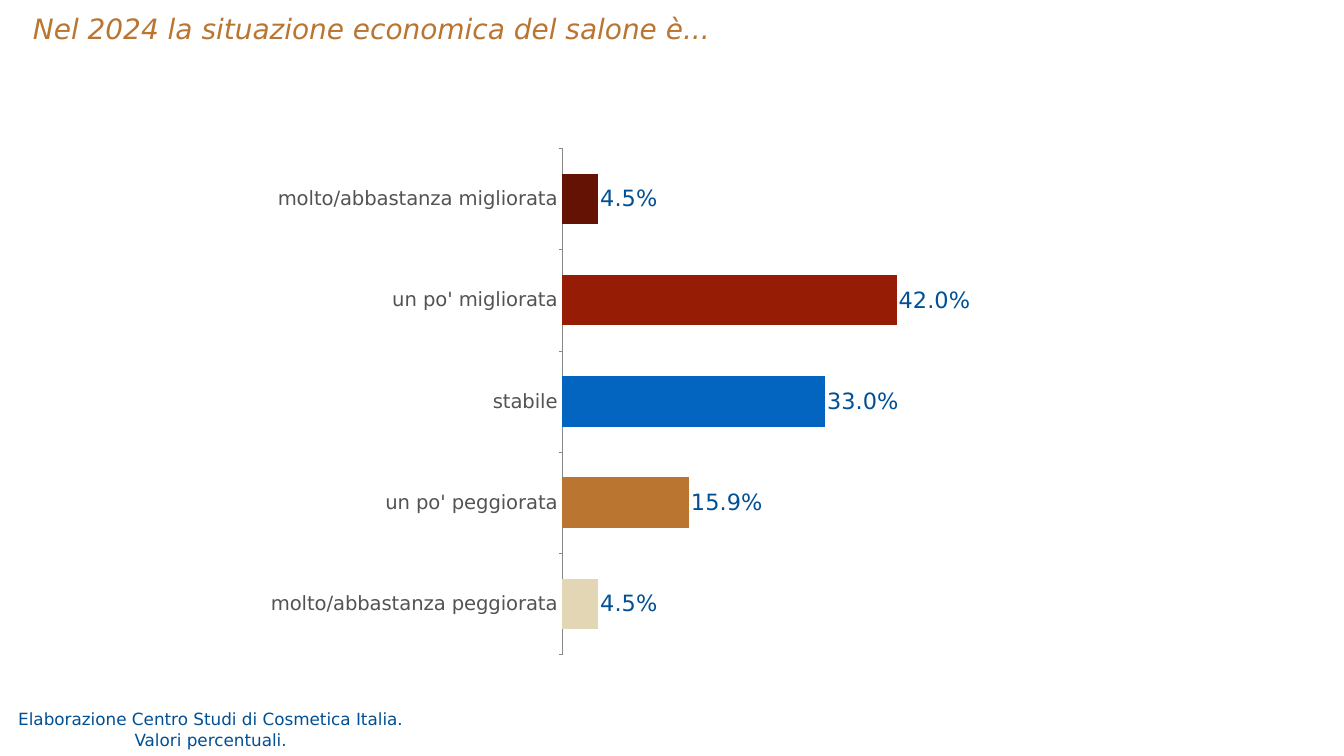
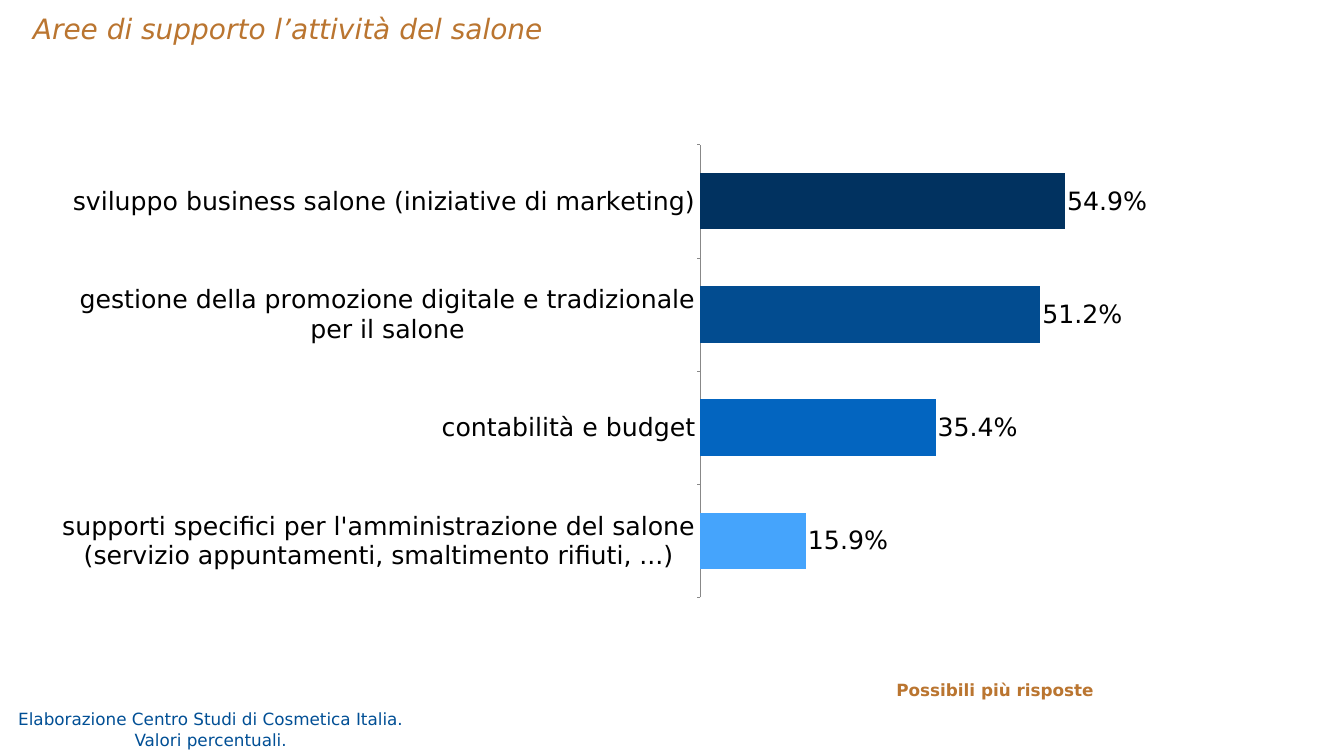
import pptx
import pptx.util
import pptx.oxml
import pptx.dml.color
import pptx.enum.text
import pptx.enum.chart
import pptx.chart.data

Pt = pptx.util.Pt
RGB = pptx.dml.color.RGBColor
Align = pptx.enum.text.PP_ALIGN
Enum = pptx.enum.chart

FONT = "DejaVu Sans"
BLACK = RGB(0x00, 0x00, 0x00)
GRAY = RGB(0x53, 0x53, 0x53)
RULE = RGB(0x88, 0x88, 0x88)
NAVY = RGB(0x01, 0x32, 0x60)
BLUE = RGB(0x01, 0x4F, 0x95)
DEEP = RGB(0x02, 0x4C, 0x90)
AZURE = RGB(0x03, 0x65, 0xC0)
SKY = RGB(0x45, 0xA4, 0xFC)
MAROON = RGB(0x64, 0x12, 0x03)
RED = RGB(0x96, 0x1C, 0x05)
BRONZE = RGB(0xBA, 0x75, 0x30)
SAND = RGB(0xE2, 0xD6, 0xB5)

FOOTER = "Elaborazione Centro Studi di Cosmetica Italia.\nValori percentuali."


def write(shape, text, box, size=24, color=BLUE, align=Align.LEFT, bold=False, italic=False, space=1.0):
    shape.left, shape.top, shape.width, shape.height = [Pt(n) for n in box]
    frame = shape.text_frame
    frame.word_wrap = True
    frame.auto_size = pptx.enum.text.MSO_AUTO_SIZE.NONE
    frame.vertical_anchor = pptx.enum.text.MSO_ANCHOR.MIDDLE
    frame.margin_left = frame.margin_right = frame.margin_top = frame.margin_bottom = Pt(4)
    frame.text = text
    for para in frame.paragraphs:
        para.alignment = align
        para.line_spacing = space
        para.space_before = Pt(0)
        font = para.runs[0].font
        font.name, font.size, font.bold, font.italic = FONT, Pt(size), bold, italic
        font.color.rgb = color


def style(font, size, color):
    font.name, font.size = FONT, Pt(size)
    font.color.rgb = color


pages = [
    {
        "title": "Nel 2024\u00a0la situazione economica del salone è...",
        "box": (314, 188, 1105, 768),
        "plot": (0.443, 0.031, 0.463, 0.942),
        "max": 0.45,
        "base": 24,
        "axis": (28, GRAY),
        "label": (32, BLUE),
        "bars": [
            ("molto/abbastanza migliorata", 0.045, MAROON),
            ("un po' migliorata", 0.42, RED),
            ("stabile", 0.33, AZURE),
            ("un po' peggiorata", 0.159, BRONZE),
            ("molto/abbastanza peggiorata", 0.045, SAND),
        ],
        "note": None,
    },
    {
        "title": "Aree di supporto l’attività del salone",
        "box": (70.5, 189.5, 1655, 682.5),
        "plot": (0.562, 0.025, 0.344, 0.948),
        "max": 0.6,
        "base": 36,
        "axis": (36, BLACK),
        "label": (36, BLACK),
        "bars": [
            ("sviluppo business salone (iniziative di marketing)", 0.549, NAVY),
            ("gestione della promozione digitale e tradizionale per il salone", 0.512, DEEP),
            ("contabilità e budget", 0.354, AZURE),
            ("supporti specifici per l'amministrazione del salone (servizio appuntamenti, smaltimento rifiuti, ...)", 0.159, SKY),
        ],
        "note": "Possibili più risposte",
    },
]

deck = pptx.Presentation()
deck.slide_width, deck.slide_height = Pt(1920), Pt(1080)

for page in pages:
    slide = deck.slides.add_slide(deck.slide_layouts[5])
    write(slide.shapes.title, page["title"], (43, 5, 1832, 60), size=40, color=BRONZE, italic=True, space=1.2)

    names, values, fills = zip(*page["bars"])
    data = pptx.chart.data.CategoryChartData(number_format="0.0%")
    data.categories = names
    data.add_series("Series 1", values)
    box = [Pt(n) for n in page["box"]]
    chart = slide.shapes.add_chart(Enum.XL_CHART_TYPE.BAR_CLUSTERED, *box, data).chart
    chart.has_legend = chart.has_title = False
    style(chart.font, page["base"], BLACK)

    area = chart.plots[0]
    area.gap_width = 100
    area.vary_by_categories = False
    bars = area.series[0]
    bars.format.fill.solid()
    bars.format.fill.fore_color.rgb = AZURE
    for i, color in enumerate(fills):
        fill = bars.points[i].format.fill
        fill.solid()
        fill.fore_color.rgb = color
    labels = bars.data_labels
    labels.show_value = True
    labels.number_format, labels.number_format_is_linked = "0.0%", False
    labels.position = Enum.XL_LABEL_POSITION.OUTSIDE_END
    style(labels.font, *page["label"])

    axis = chart.category_axis
    axis.reverse_order = True
    axis.has_major_gridlines = False
    axis.major_tick_mark = Enum.XL_TICK_MARK.OUTSIDE
    axis.format.line.color.rgb = RULE
    axis.format.line.width = Pt(0.75)
    style(axis.tick_labels.font, *page["axis"])

    scale = chart.value_axis
    scale.minimum_scale, scale.maximum_scale = 0, page["max"]
    scale.has_major_gridlines = False
    scale.tick_labels.number_format = "0.0%"
    scale.tick_labels.number_format_is_linked = False
    scale.visible = False

    plot = chart.element.find(".//{*}plotArea")
    for old in plot.findall("{*}layout"):
        plot.remove(old)
    spots = "".join(f'<c:{tag} val="{n}"/>' for tag, n in zip("xywh", page["plot"]))
    plot.insert(0, pptx.oxml.parse_xml(
        '<c:layout xmlns:c="http://schemas.openxmlformats.org/drawingml/2006/chart"><c:manualLayout>'
        '<c:layoutTarget val="inner"/><c:xMode val="edge"/><c:yMode val="edge"/>'
        f'{spots}</c:manualLayout></c:layout>'))

    if page["note"]:
        note = slide.shapes.add_textbox(0, 0, 0, 0)
        write(note, page["note"], (1276.5, 962, 340.5, 40), color=BRONZE, bold=True, space=1.2)
    foot = slide.shapes.add_textbox(0, 0, 0, 0)
    write(foot, FOOTER, (-2, 1008.5, 606, 66.5), align=Align.CENTER)

deck.save("out.pptx")
